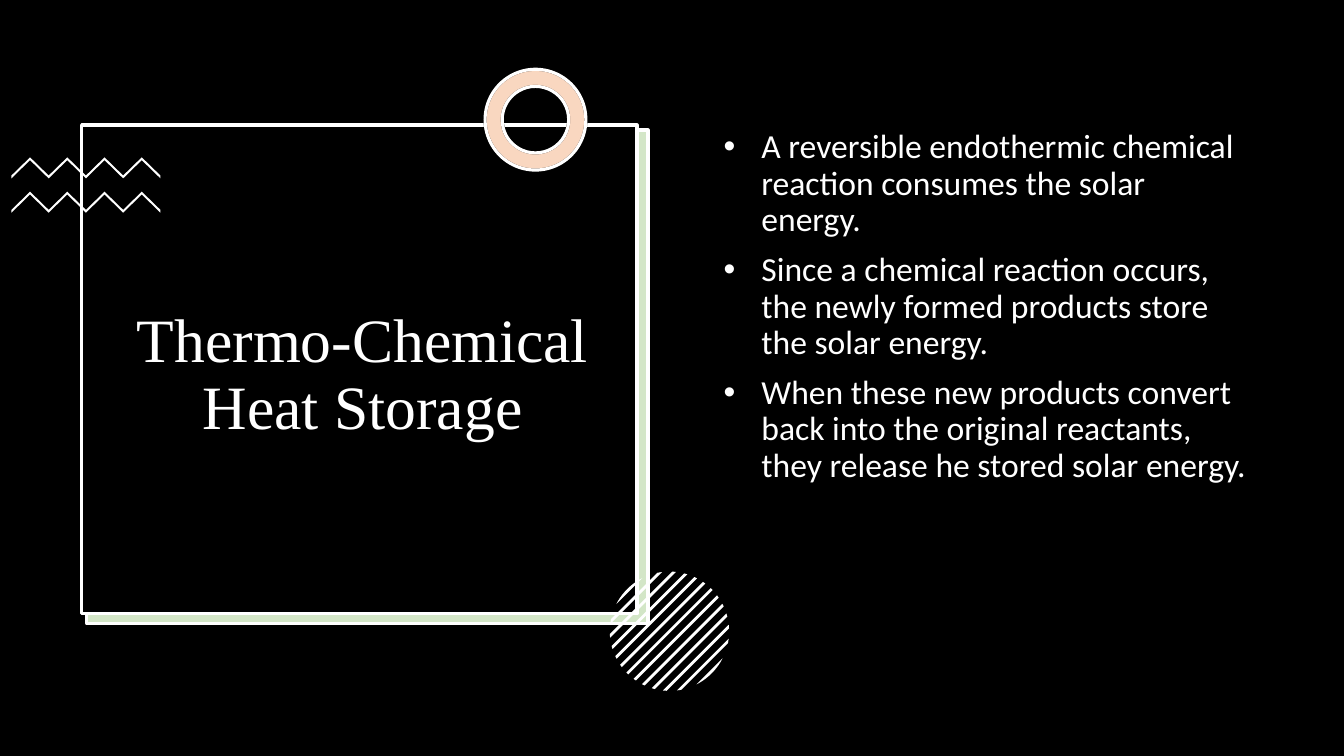
from math import acos, cos, pi, sin

from lxml import etree
from pptx import Presentation
from pptx.dml.color import RGBColor
from pptx.enum.shapes import MSO_SHAPE
from pptx.enum.text import MSO_ANCHOR, PP_ALIGN
from pptx.oxml.ns import qn
from pptx.util import Pt

RECTANGLE = MSO_SHAPE.RECTANGLE
DONUT = MSO_SHAPE.DONUT
TOP = MSO_ANCHOR.TOP
MIDDLE = MSO_ANCHOR.MIDDLE
CENTER = PP_ALIGN.CENTER

BLACK = RGBColor(0x00, 0x00, 0x00)
WHITE = RGBColor(0xFF, 0xFF, 0xFF)
GREEN = RGBColor(0x70, 0xAD, 0x47)
ORANGE = RGBColor(0xED, 0x7D, 0x31)

TITLE = "Thermo-Chemical Heat Storage"
POINTS = [
    "A reversible endothermic chemical reaction consumes the solar energy.",
    "Since a chemical reaction occurs, the newly formed products store the solar energy.",
    "When these new products convert back into the original reactants, "
    "they release he stored solar energy.",
]


class SlideBuilder:
    line_width = 2.25
    line_spacing = 0.9
    bullet_indent = 27
    bullet_gap = 10

    def __init__(self, slide):
        self.slide = slide

    def paint(self, shape, fill, line=None, opacity=None):
        shape.shadow.inherit = False
        shape.fill.solid()
        shape.fill.fore_color.rgb = fill
        if opacity is not None:
            color = shape.fill._xPr.find(qn("a:solidFill"))[0]
            etree.SubElement(color, qn("a:alpha"), val=str(opacity * 1000))
        if line is None:
            shape.line.fill.background()
        else:
            shape.line.color.rgb = line
            shape.line.width = Pt(self.line_width)

    def preset(self, kind, box, fill, line=None, opacity=None):
        shape = self.slide.shapes.add_shape(kind, *map(Pt, box))
        self.paint(shape, fill, line, opacity)
        return shape

    def ring(self, box, fill, line, opacity=None):
        self.preset(DONUT, box, fill, line, opacity).adjustments[0] = 0.17

    def polygons(self, outlines, fill):
        group = self.slide.shapes.add_group_shape()
        for outline in outlines:
            corners = [(Pt(x), Pt(y)) for x, y in outline]
            builder = group.shapes.build_freeform(*corners[0])
            builder.add_line_segments(corners[1:], close=True)
            self.paint(builder.convert_to_shape(), fill)

    def zigzags(self, left, tops, step, height, thickness, count):
        outlines = []
        for top in tops:
            upper = [(left + i * step, top + (0 if i % 2 else height))
                     for i in range(count + 1)]
            lower = [(x, y + thickness) for x, y in reversed(upper)]
            outlines.append(upper + lower)
        self.polygons(outlines, WHITE)

    def striped_disc(self, center_x, center_y, radius, pitch, width, reach, steps=4):
        outlines = []
        for stripe in range(-reach, reach + 1):
            start, end = (acos(max(-1, min(1, (stripe * pitch + side) / radius)))
                          for side in (-width / 2, width / 2))
            arc = [start + (end - start) * i / steps for i in range(steps + 1)]
            angles = arc + [-angle for angle in reversed(arc)]
            outlines.append([(center_x + radius * cos(pi / 4 + angle),
                              center_y + radius * sin(pi / 4 + angle))
                             for angle in angles])
        self.polygons(outlines, WHITE)

    def text(self, box, lines, font, size, anchor, align=None, bullets=False):
        frame = self.slide.shapes.add_textbox(*map(Pt, box)).text_frame
        frame.word_wrap = True
        frame.vertical_anchor = anchor
        frame.text = "\n".join(lines)
        for paragraph in frame.paragraphs:
            paragraph.alignment = align
            paragraph.line_spacing = self.line_spacing
            run_font = paragraph.runs[0].font
            run_font.name = font
            run_font.size = Pt(size)
            run_font.color.rgb = WHITE
            if bullets:
                self.bullet(paragraph)

    def bullet(self, paragraph):
        paragraph.space_before = Pt(self.bullet_gap)
        properties = paragraph._p.get_or_add_pPr()
        properties.set("marL", str(Pt(self.bullet_indent)))
        properties.set("indent", str(-Pt(self.bullet_indent)))
        etree.SubElement(properties, qn("a:buFont"), typeface="Arial")
        etree.SubElement(properties, qn("a:buChar"), char="•")


def main():
    presentation = Presentation()
    presentation.slide_width = Pt(960)
    presentation.slide_height = Pt(540)
    builder = SlideBuilder(presentation.slides.add_slide(presentation.slide_layouts[6]))

    builder.preset(RECTANGLE, (0, 0, 960, 540), BLACK)
    builder.preset(RECTANGLE, (61.2, 93.6, 401, 352.8), WHITE)
    builder.preset(RECTANGLE, (61.9, 92.9, 401, 352.8), GREEN, WHITE, 30)
    builder.preset(RECTANGLE, (58.3, 89.3, 396.7, 349.2), BLACK, WHITE)

    builder.zigzags(8.2, (112.4, 136.9), 13.3, 13, 2, 8)
    ring_box = (346.5, 49.5, 72, 72)
    builder.ring(ring_box, WHITE, BLACK)
    builder.ring(ring_box, ORANGE, WHITE, 30)
    builder.striped_disc(478.2, 450.9, 42.6, 6.92, 2, 6)

    builder.text((66.2, 109.4, 385.9, 318.2), [TITLE],
                 "Times New Roman", 44, MIDDLE, CENTER)
    builder.text((509.8, 89.3, 391.7, 342.7), POINTS,
                 "Calibri", 24, TOP, bullets=True)
    presentation.save("out.pptx")


if __name__ == "__main__":
    main()
